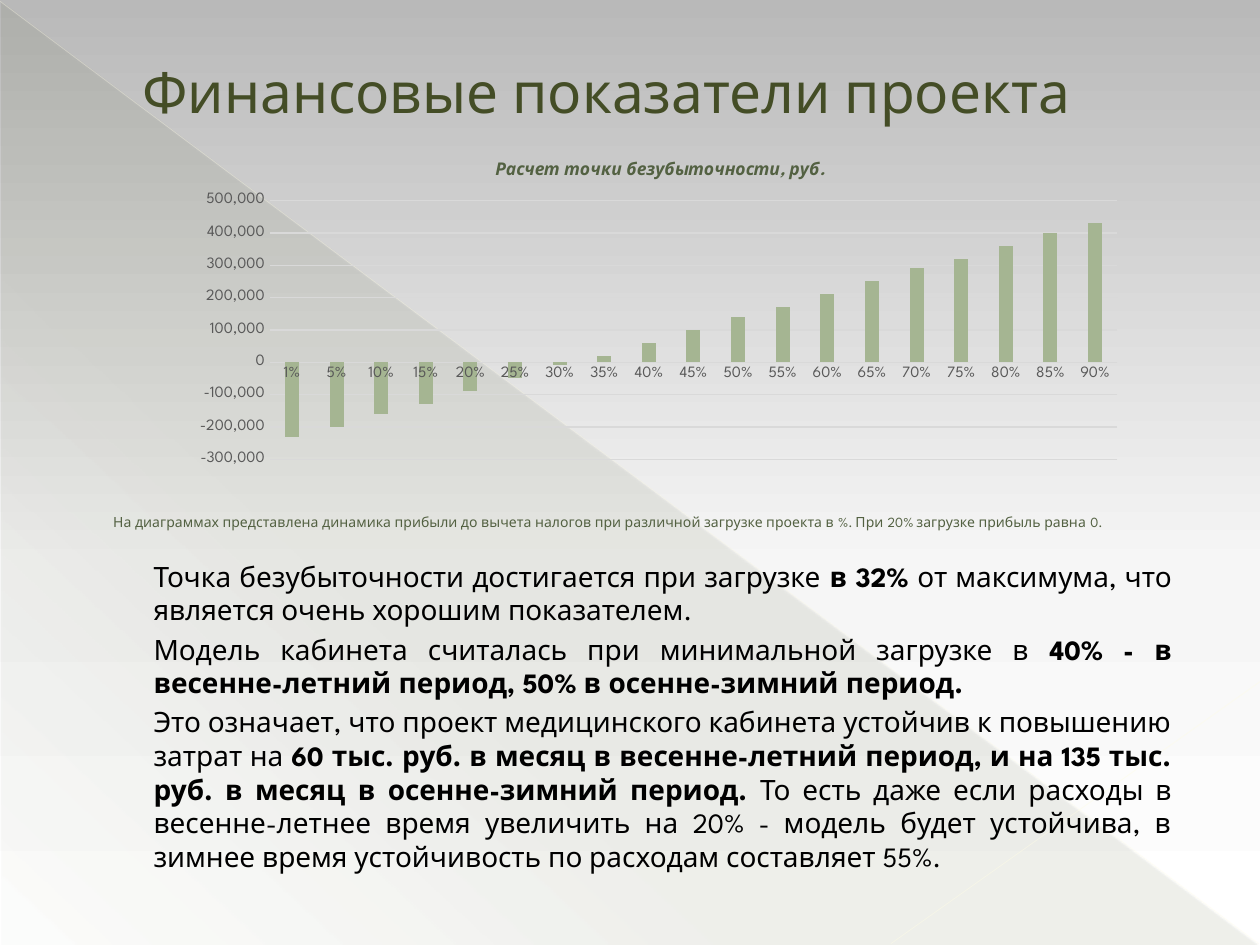
import pptx
import pptx.util
import pptx.oxml
import pptx.oxml.ns
import pptx.chart.data
import pptx.dml.color
import pptx.enum.chart
import pptx.enum.shapes
import pptx.enum.text
import lxml.etree

RGB = pptx.dml.color.RGBColor
OLIVE = RGB(0x44, 0x4D, 0x26)
MOSS = RGB(0x53, 0x61, 0x42)
SAGE = RGB(0xA5, 0xB5, 0x92)
CREAM = RGB(0xFF, 0xFD, 0xE3)
PALE = RGB(0xFF, 0xFD, 0xE6)
GRID = RGB(0xD9, 0xD9, 0xD9)
GREY = RGB(0x59, 0x59, 0x59)
BLACK = RGB(0, 0, 0)
ASH = RGB(0xB9, 0xB9, 0xB9)
MIST = RGB(0xF6, 0xF6, 0xF6)
WHITE = RGB(0xFF, 0xFF, 0xFF)
FACE = "League Spartan"
COLS, ROWS = 100, 75
ALIGN = pptx.enum.text.PP_ALIGN

POINTS = [
    [("Точка безубыточности достигается при загрузке ", False),
     ("в 32% ", True),
     ("от максимума, что является очень хорошим показателем.", False)],
    [("Модель кабинета считалась при минимальной загрузке в ", False),
     ("40% - в весенне-летний период, 50% в осенне-зимний период.", True)],
    [("Это означает, что проект медицинского кабинета устойчив к повышению "
      "затрат на ", False),
     ("60 тыс. руб. в месяц в весенне-летний период, и на 135 тыс. руб. "
      "в месяц в осенне-зимний период. ", True),
     ("То есть даже если расходы в весенне-летнее время увеличить на 20% - "
      "модель будет устойчива, в зимнее время устойчивость по расходам "
      "составляет 55%.", False)],
]
LOADS = ["1%"] + [f"{load}%" for load in range(5, 95, 5)]
GAINS = [-230000, -200000, -160000, -130000, -90000, -50000, -10000,
         20000, 60000, 100000, 140000, 170000, 210000, 250000, 290000,
         320000, 360000, 400000, 430000]


def style(font, size, color, bold=False, italic=False):
    font.name, font.size = FACE, pptx.util.Pt(size)
    font.bold, font.italic = bold, italic
    font.color.rgb = color


def write(par, text, size=16, color=BLACK, bold=False, italic=False):
    run = par.add_run()
    run.text = text
    style(run.font, size, color, bold, italic)


def fade(fill, stops, angle):
    fill.gradient()
    grad = fill._xPr.find(pptx.oxml.ns.qn("a:gradFill"))
    for part in list(grad):
        grad.remove(part)
    marks = "".join(
        f'<a:gs pos="{pos * 1000}"><a:srgbClr val="{color}">'
        f'<a:alpha val="{alpha * 1000}"/></a:srgbClr></a:gs>'
        for pos, color, alpha in stops)
    space = pptx.oxml.ns.nsdecls("a")
    grad.append(pptx.oxml.parse_xml(f"<a:gsLst {space}>{marks}</a:gsLst>"))
    grad.append(pptx.oxml.parse_xml(
        f'<a:lin {space} ang="{angle * 60000}" scaled="0"/>'))


class Page:
    def __init__(self, deck):
        self.wide, self.high = deck.slide_width, deck.slide_height
        self.slide = deck.slides.add_slide(deck.slide_layouts[5])
        self.shapes = self.slide.shapes

    def place(self, x, y, w, h):
        return (round(self.wide * x / COLS), round(self.high * y / ROWS),
                round(self.wide * w / COLS), round(self.high * h / ROWS))

    def wedge(self, spot, stops, angle):
        shape = self.shapes.add_shape(
            pptx.enum.shapes.MSO_SHAPE.RIGHT_TRIANGLE, *self.place(*spot))
        shape.shadow.inherit = False
        shape.line.fill.background()
        fade(shape.fill, stops, angle)

    def line(self, ends, color, width, alpha):
        link = self.shapes.add_connector(
            pptx.enum.shapes.MSO_CONNECTOR.STRAIGHT, *self.place(*ends))
        link.line.color.rgb = color
        link.line.width = pptx.util.Pt(width)
        props = link._element.spPr
        tint = next(props.iter(pptx.oxml.ns.qn("a:srgbClr")))
        lxml.etree.SubElement(
            tint, pptx.oxml.ns.qn("a:alpha")).set("val", str(alpha * 1000))
        lxml.etree.SubElement(props, pptx.oxml.ns.qn("a:effectLst"))

    def title(self, spot, text):
        box = self.shapes.title
        box.left, box.top, box.width, box.height = self.place(*spot)
        frame = box.text_frame
        frame.word_wrap = True
        frame.vertical_anchor = pptx.enum.text.MSO_ANCHOR.MIDDLE
        self.fill(frame.paragraphs[0], [(text, False)], ALIGN.LEFT, 5.3,
                  size=32.4, color=OLIVE)

    def text(self, spot, pars, align=ALIGN.LEFT, indent=0, gap=0, **form):
        frame = self.shapes.add_textbox(*self.place(*spot)).text_frame
        frame.word_wrap = True
        for rank, runs in enumerate(pars):
            par = frame.add_paragraph() if rank else frame.paragraphs[0]
            if rank:
                par.space_before = pptx.util.Pt(gap)
            self.fill(par, runs, align, indent, **form)

    def fill(self, par, runs, align, indent, **form):
        par.alignment = align
        props = par._p.get_or_add_pPr()
        props.set("marL", str(round(self.wide * indent / COLS)))
        props.set("indent", "0")
        for text, bold in runs:
            write(par, text, bold=bold, **form)

    def chart(self, spot, name, cats, vals):
        data = pptx.chart.data.CategoryChartData(number_format="#,##0")
        data.categories = cats
        data.add_series("Series 1", vals)
        kind = pptx.enum.chart.XL_CHART_TYPE.COLUMN_CLUSTERED
        chart = self.shapes.add_chart(kind, *self.place(*spot), data).chart
        style(chart.font, 9, BLACK)
        chart.has_legend = False
        head = chart.chart_title.text_frame.paragraphs[0]
        write(head, name, size=10, color=MOSS, bold=True, italic=True)
        chart.chart_title.include_in_layout = False
        plot = chart.plots[0]
        plot.gap_width, plot.overlap = 219, -27
        plot.vary_by_categories = False
        bars = plot.series[0]
        bars.invert_if_negative = False
        bars.format.fill.solid()
        bars.format.fill.fore_color.rgb = SAGE
        for axis in (chart.category_axis, chart.value_axis):
            axis.major_tick_mark = pptx.enum.chart.XL_TICK_MARK.NONE
            style(axis.tick_labels.font, 9, GREY)
        scale = chart.value_axis
        scale.minimum_scale, scale.maximum_scale = -300000, 500000
        scale.major_unit = 100000
        scale.tick_labels.number_format = "#,##0"
        scale.tick_labels.number_format_is_linked = False
        scale.format.line.fill.background()
        for rule in (chart.category_axis.format.line,
                     scale.major_gridlines.format.line):
            rule.color.rgb = GRID
            rule.width = pptx.util.Pt(0.75)
        self.frame(chart, x=0.09, y=0.17, w=0.89, h=0.79)

    def frame(self, chart, **sides):
        area = chart._chartSpace.chart.plotArea
        for old in area.findall(pptx.oxml.ns.qn("c:layout")):
            area.remove(old)
        marks = "".join(f'<c:{key} val="{val}"/>'
                        for key, val in sides.items())
        area.insert(0, pptx.oxml.parse_xml(
            f'<c:layout {pptx.oxml.ns.nsdecls("c")}><c:manualLayout>'
            '<c:layoutTarget val="inner"/><c:xMode val="edge"/>'
            f'<c:yMode val="edge"/>{marks}</c:manualLayout></c:layout>'))


def main():
    deck = pptx.Presentation()
    deck.slide_width = pptx.util.Inches(10)
    deck.slide_height = pptx.util.Inches(7.5)
    page = Page(deck)
    fade(page.slide.background.fill,
         [(0, ASH, 100), (60, MIST, 100), (100, WHITE, 100)], 90)
    page.wedge((0.1, 0.2, 99.8, 74.8),
               [(0, OLIVE, 10), (70, OLIVE, 8), (100, OLIVE, 1)], 133)
    page.line((0, 0.1, 99.9, 74.9), CREAM, 0.39, 35)
    page.line((100, 54.1, 70.7, 74.9), PALE, 0.47, 45)
    page.title((5, 2.9, 90, 8.6), "Финансовые показатели проекта")
    note = ("На диаграммах представлена динамика прибыли до вычета налогов "
            "при различной загрузке проекта в %. "
            "При 20% загрузке прибыль равна 0.")
    page.text((8, 40.3, 88.4, 2.4), [[(note, False)]], size=8, color=MOSS)
    page.text((10.5, 43.9, 83.5, 25.2), POINTS, align=ALIGN.JUSTIFY,
              indent=0.7, gap=3.2)
    page.chart((14.6, 11.5, 75.6, 26), "Расчет точки безубыточности, руб.",
               LOADS, GAINS)
    deck.save("out.pptx")


if __name__ == "__main__":
    main()
